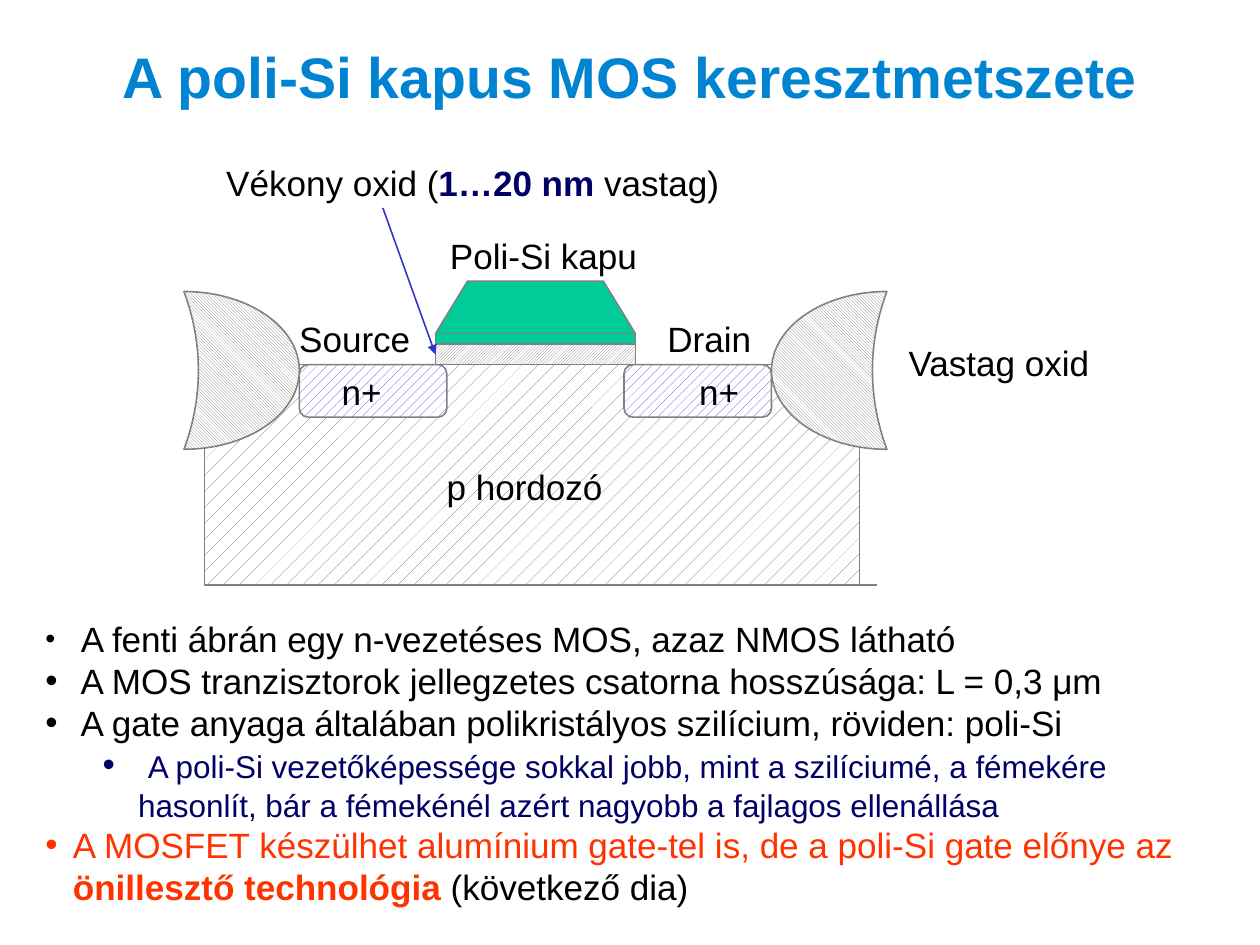
from lxml.etree import SubElement
from pptx import Presentation
from pptx.dml.color import RGBColor as RGB
from pptx.enum.dml import MSO_PATTERN_TYPE as Pattern
from pptx.enum.shapes import MSO_CONNECTOR as Link, MSO_SHAPE as Form
from pptx.enum.text import MSO_ANCHOR as Anchor, MSO_AUTO_SIZE as Fit, PP_ALIGN as Align
from pptx.oxml.ns import qn
from pptx.util import Pt

THEME = {
    "font": "Arial", "title_size": 36, "body": 22.1, "sub": 19.8, "small": 18,
    "title": "0084D1", "text": "000000", "navy": "000066", "red": "FF3300",
    "outline": "808080", "gate": "00CC99", "p_hatch": "82565E", "n_hatch": "3636FF",
    "paper": "FFFFFF", "pointer": "3333CC",
}
SLIDE = (793.75, 595.25)
TITLE = "A poli-Si kapus MOS keresztmetszete"
LABELS = [
    (135.4, 97.9, 342.7, Align.LEFT,
     [("Vékony oxid (", "body", "text", False), ("1…20 nm", "body", "navy", True),
      (" vastag)", "body", "text", False)]),
]
LABELS += [(left, top, width, align, [(wording, "body", "text", False)])
           for left, top, width, align, wording in [
    (208.1, 229.7, 59.8, Align.LEFT, "n+"),
    (433.4, 229.7, 59.8, Align.LEFT, "n+"),
    (181.4, 196.6, 85.7, Align.LEFT, "Source"),
    (413.3, 196.6, 85.7, Align.LEFT, "Drain"),
    (274.3, 289.4, 165.6, Align.LEFT, "p hordozó"),
    (554.4, 211.7, 149.8, Align.CENTER, "Vastag oxid"),
    (274.3, 144, 136.1, Align.CENTER, "Poli-Si kapu"),
]]
BULLETS = [
    (0, [(" ", "small", "text", False),
         ("A fenti ábrán egy n-vezetéses MOS, azaz NMOS látható", "body", "text", False)]),
    (0, [(" A MOS tranzisztorok jellegzetes csatorna hosszúsága: L = 0,3 μm",
          "body", "text", False)]),
    (0, [(" A gate anyaga általában polikristályos szilícium, röviden: poli-Si",
          "body", "text", False)]),
    (1, [(" ", "body", "navy", False),
         ("A poli-Si vezetőképessége sokkal jobb, mint a szilíciumé, a fémekére hasonlít, "
          "bár a fémekénél azért nagyobb a fajlagos ellenállása", "sub", "navy", False)]),
    (0, [("A MOSFET készülhet alumínium gate-tel is, de a poli-Si gate előnye az ",
          "body", "red", False),
         ("önillesztő technológia", "body", "red", True),
         (" (következő dia)", "body", "text", False)]),
]
INDENTS = [(17.3, -17.3), (58.3, -22.3)]
SURFACE = 229.7
GATE_LEFT, GATE_WIDTH, GATE_TAPER = 274.3, 126, 20.2
GATE_TOP, POLY_TOP, OXIDE_TOP = 177.1, 210.2, 216.7
SUBSTRATE = (128.9, SURFACE, 412.6, 138.9)
WELL = (188.6, SURFACE, 92.9, 33.1)
FIELD_OXIDE = (115.9, 183.6, 72.7, 99.4)
POINTER_START = (241.2, 131)

prs = Presentation()
prs.slide_width, prs.slide_height = map(Pt, SLIDE)
slide = prs.slides.add_slide(prs.slide_layouts[6])
shapes = slide.shapes


def color(name):
    return RGB.from_string(THEME[name])


def mirrored(box):
    left, top, width, height = box
    return 2 * GATE_LEFT + GATE_WIDTH - left - width, top, width, height


def finish(part, ink, pattern=None):
    part.shadow.inherit = False
    part.line.color.rgb = color("outline")
    part.line.width = Pt(1)
    if pattern is None:
        part.fill.solid()
        part.fill.fore_color.rgb = color(ink)
    else:
        part.fill.patterned()
        part.fill.pattern = pattern
        part.fill.fore_color.rgb = color(ink)
        part.fill.back_color.rgb = color("paper")
    return part


def region(form, box, ink, pattern=None, adjust=None):
    part = shapes.add_shape(form, *map(Pt, box))
    if adjust is not None:
        part.adjustments[0] = adjust
    return finish(part, ink, pattern)


def edge(start, end, ink="outline"):
    link = shapes.add_connector(Link.STRAIGHT, *map(Pt, start + end))
    link.line.color.rgb = color(ink)
    link.line.width = Pt(1)
    SubElement(link._element.spPr, qn("a:effectLst"))
    return link


def text_frame(box, **settings):
    frame = shapes.add_textbox(*map(Pt, box)).text_frame
    for name, setting in {"word_wrap": True, **settings}.items():
        setattr(frame, name, setting)
    return frame


def write(paragraph, runs, align=Align.LEFT, spacing=1.0):
    paragraph.alignment = align
    paragraph.line_spacing = spacing
    for wording, size, ink, bold in runs:
        run = paragraph.add_run()
        run.text = wording
        style = {"name": THEME["font"], "size": Pt(THEME[size]), "bold": bold}
        for name, setting in style.items():
            setattr(run.font, name, setting)
        run.font.color.rgb = color(ink)


heading = text_frame((21.6, 0, 750.2, 99.4), vertical_anchor=Anchor.MIDDLE,
                     margin_left=0, margin_top=0, margin_right=0, margin_bottom=0)
write(heading.paragraphs[0], [(TITLE, "title_size", "title", True)], Align.CENTER, 0.93)

region(Form.RECTANGLE, SUBSTRATE, "p_hatch", Pattern.PERCENT_5)
for well in (WELL, mirrored(WELL)):
    region(Form.ROUNDED_RECTANGLE, well, "n_hatch", Pattern.PERCENT_20, 0.167)
for field, flip in ((FIELD_OXIDE, "1"), (mirrored(FIELD_OXIDE), "0")):
    moon = region(Form.MOON, field, "outline", Pattern.LIGHT_DOWNWARD_DIAGONAL, 0.875)
    moon._element.spPr.xfrm.set("flipH", flip)

gate_right = GATE_LEFT + GATE_WIDTH
outline = shapes.build_freeform(Pt(GATE_LEFT), Pt(POLY_TOP))
outline.add_line_segments([(Pt(x), Pt(y)) for x, y in (
    (GATE_LEFT + GATE_TAPER, GATE_TOP), (gate_right - GATE_TAPER, GATE_TOP),
    (gate_right, POLY_TOP))], close=True)
finish(outline.convert_to_shape(), "gate")
gate_oxide = region(Form.RECTANGLE, (GATE_LEFT, OXIDE_TOP, GATE_WIDTH, SURFACE - OXIDE_TOP),
                    "outline", Pattern.LIGHT_UPWARD_DIAGONAL)
region(Form.RECTANGLE, (GATE_LEFT, POLY_TOP, GATE_WIDTH, OXIDE_TOP - POLY_TOP), "gate")

well_right = mirrored(WELL)[0] + WELL[2]
bottom = SURFACE + SUBSTRATE[3]
for start, end, level in ((WELL[0], GATE_LEFT, SURFACE), (gate_right, well_right, SURFACE),
                          (135.4, 552.2, bottom)):
    edge((start, level), (end, level))
pointer = edge(POINTER_START, (GATE_LEFT, (OXIDE_TOP + SURFACE) / 2), "pointer")
pointer.end_connect(gate_oxide, 1)
SubElement(pointer.line._get_or_add_ln(), qn("a:tailEnd"), type="triangle")

for left, top, width, align, runs in LABELS:
    label = text_frame((left, top, width, 33.8), auto_size=Fit.SHAPE_TO_FIT_TEXT)
    write(label.paragraphs[0], runs, align)

notes = text_frame((21.6, 385.2, 743.8, 191.5), auto_size=Fit.SHAPE_TO_FIT_TEXT)
for index, (level, runs) in enumerate(BULLETS):
    paragraph = notes.add_paragraph() if index else notes.paragraphs[0]
    paragraph.level = level
    write(paragraph, runs)
    margin, indent = INDENTS[level]
    props = paragraph._p.get_or_add_pPr()
    props.set("marL", str(Pt(margin)))
    props.set("indent", str(Pt(indent)))
    SubElement(props, qn("a:buFont"), typeface=THEME["font"])
    SubElement(props, qn("a:buChar"), char="•")

prs.save("out.pptx")
